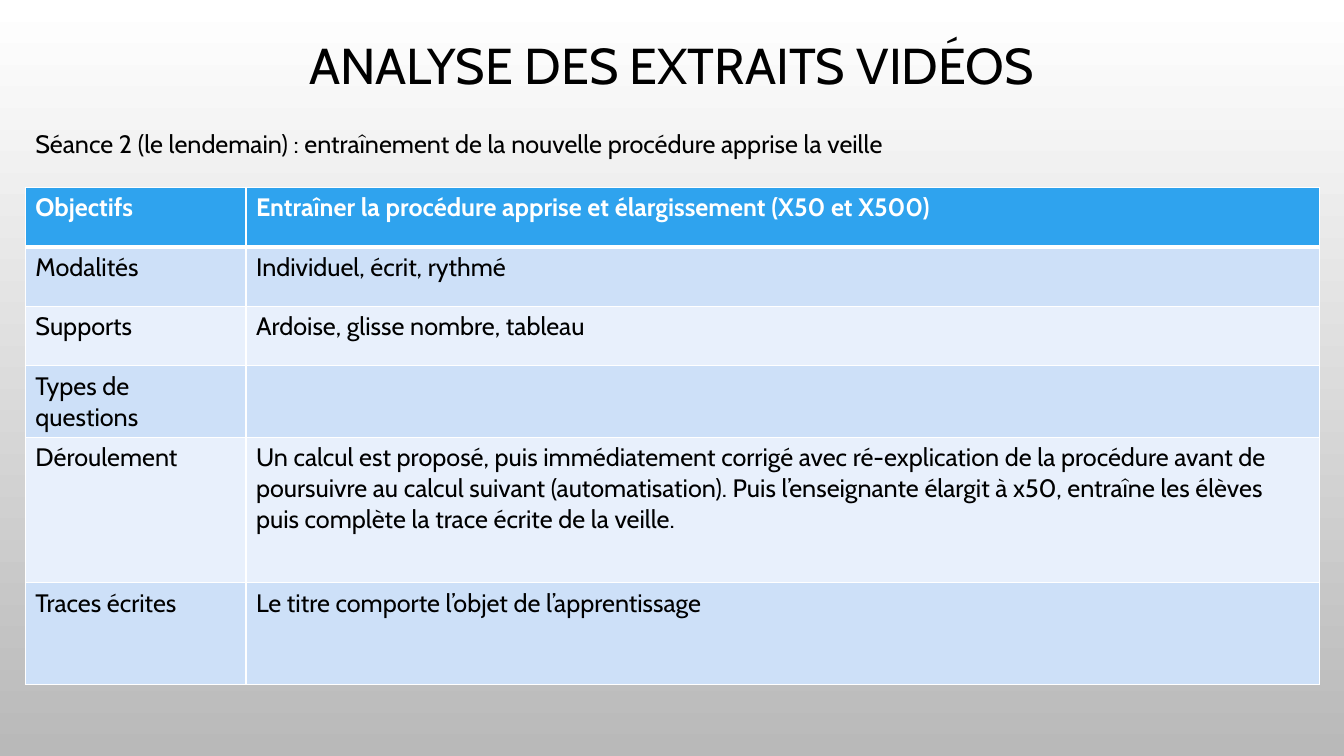
"""Build the slide describing session 2 of the video extract analysis."""
from dataclasses import dataclass

from lxml import etree
from pptx import Presentation
from pptx.dml.color import RGBColor
from pptx.enum.text import MSO_ANCHOR, MSO_AUTO_SIZE, PP_ALIGN
from pptx.oxml.ns import qn
from pptx.slide import Slide
from pptx.table import _Cell
from pptx.text.text import TextFrame
from pptx.util import Cm, Pt

CENTER = PP_ALIGN.CENTER
MIDDLE = MSO_ANCHOR.MIDDLE
GROW = MSO_AUTO_SIZE.SHAPE_TO_FIT_TEXT
BLACK = RGBColor(0x00, 0x00, 0x00)
WHITE = RGBColor(0xFF, 0xFF, 0xFF)
GRAY = RGBColor(0xB9, 0xB9, 0xB9)
HEADER_BLUE = RGBColor(0x2F, 0xA3, 0xEE)
BAND_BLUES = (RGBColor(0xE8, 0xF0, 0xFC), RGBColor(0xCD, 0xE0, 0xF8))
BODY_FORMAT = {"name": "Cabin", "size": Pt(18), "bold": False}
HEADER_FORMAT = BODY_FORMAT | {"bold": True}
TITLE_FORMAT = BODY_FORMAT | {"size": Pt(36)}
COLUMN_WIDTHS = (5.56, 27.05)


@dataclass(frozen=True)
class SessionRow:
    """One labelled row of the session table, with its height in cm."""

    label: str
    content: str
    height: float = 1.5


SESSION_ROWS = (
    SessionRow("Objectifs", "Entraîner la procédure apprise et élargissement (X50 et X500)"),
    SessionRow("Modalités", "Individuel, écrit, rythmé"),
    SessionRow("Supports", "Ardoise, glisse nombre, tableau"),
    SessionRow("Types de questions", ""),
    SessionRow(
        "Déroulement",
        "Un calcul est proposé, puis immédiatement corrigé avec ré-explication de la "
        "procédure avant de poursuivre au calcul suivant (automatisation). Puis "
        "l’enseignante élargit à x50, entraîne les élèves puis complète la trace "
        "écrite de la veille.",
        3.66,
    ),
    SessionRow("Traces écrites", "Le titre comporte l’objet de l’apprentissage", 2.57),
)


def write_text(frame: TextFrame, text: str, text_format: dict, color: RGBColor) -> None:
    """Write one formatted run into the first paragraph of a frame."""
    run = frame.paragraphs[0].add_run()
    run.text = text
    for attribute, value in text_format.items():
        setattr(run.font, attribute, value)
    run.font.color.rgb = color


def set_borders(cell: _Cell, bottom_width: float) -> None:
    """Give a cell white borders, 1 pt wide except at the bottom."""
    properties = cell._tc.get_or_add_tcPr()
    widths = {"a:lnL": 1, "a:lnR": 1, "a:lnT": 1, "a:lnB": bottom_width}
    for tag, width in widths.items():
        line = etree.SubElement(properties, qn(tag), w=str(Pt(width)))
        fill = etree.SubElement(line, qn("a:solidFill"))
        etree.SubElement(fill, qn("a:srgbClr"), val=str(WHITE))


def set_background(slide: Slide) -> None:
    """Fill the background with a gradient from white down to gray."""
    fill = slide.background.fill
    fill.gradient()
    fill.gradient_angle = 270
    for stop, color in zip(fill.gradient_stops, (WHITE, GRAY)):
        stop.color.rgb = color


def add_title(slide: Slide) -> None:
    """Place and format the title placeholder."""
    title = slide.shapes.title
    title.left, title.top, title.width, title.height = Cm(2.54), Cm(0.58), Cm(28.78), Cm(2.26)
    frame = title.text_frame
    frame.vertical_anchor = MIDDLE
    frame.paragraphs[0].alignment = CENTER
    frame.paragraphs[0].line_spacing = 0.9
    write_text(frame, "ANALYSE DES EXTRAITS VIDÉOS", TITLE_FORMAT, BLACK)


def add_session_heading(slide: Slide) -> None:
    """Add the line that introduces the session table."""
    heading = slide.shapes.add_textbox(Cm(0.64), Cm(3.12), Cm(32.03), Cm(1.02))
    frame = heading.text_frame
    frame.word_wrap = True
    frame.auto_size = GROW
    write_text(
        frame,
        "Séance 2 (le lendemain) : entraînement de la nouvelle procédure apprise la veille",
        BODY_FORMAT,
        BLACK,
    )


def add_session_table(slide: Slide) -> None:
    """Add the session table with its header and banded rows."""
    table = slide.shapes.add_table(
        len(SESSION_ROWS), len(COLUMN_WIDTHS), Cm(0.64), Cm(4.72),
        Cm(sum(COLUMN_WIDTHS)), Cm(sum(row.height for row in SESSION_ROWS)),
    ).table
    for column, width in zip(table.columns, COLUMN_WIDTHS):
        column.width = Cm(width)
    for index, session_row in enumerate(SESSION_ROWS):
        is_header = index == 0
        table.rows[index].height = Cm(session_row.height)
        texts = (session_row.label, session_row.content)
        for cell, text in zip(table.rows[index].cells, texts):
            set_borders(cell, 3 if is_header else 1)
            cell.fill.solid()
            cell.fill.fore_color.rgb = HEADER_BLUE if is_header else BAND_BLUES[index % 2]
            if text:
                write_text(
                    cell.text_frame,
                    text,
                    HEADER_FORMAT if is_header else BODY_FORMAT,
                    WHITE if is_header else BLACK,
                )


def main() -> None:
    """Build and save the presentation."""
    presentation = Presentation()
    presentation.slide_width, presentation.slide_height = Cm(33.87), Cm(19.05)
    slide = presentation.slides.add_slide(presentation.slide_layouts[5])
    set_background(slide)
    add_title(slide)
    add_session_table(slide)
    add_session_heading(slide)
    presentation.save("out.pptx")


if __name__ == "__main__":
    main()
